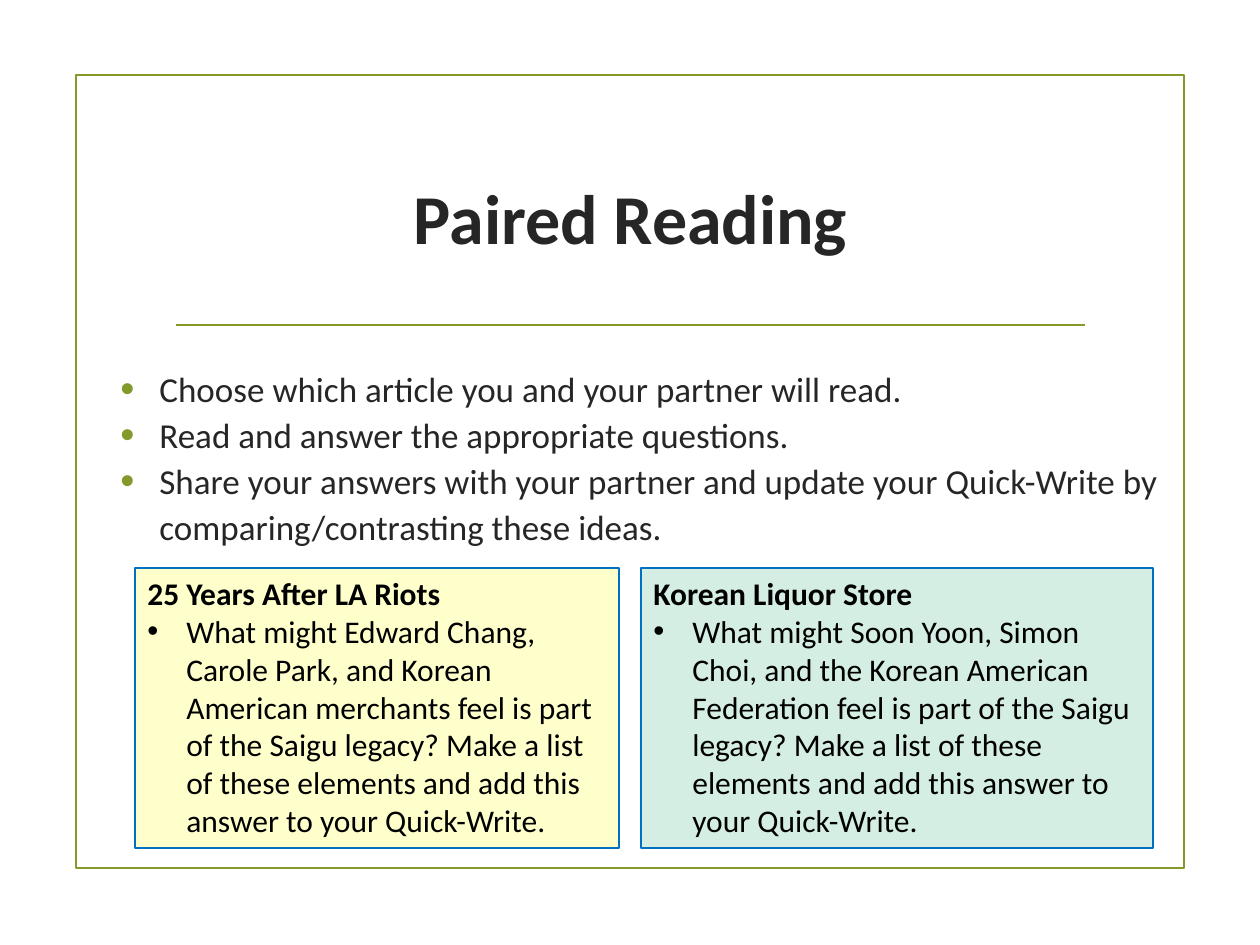
from lxml.etree import SubElement
from pptx import Presentation
from pptx.dml.color import RGBColor
from pptx.enum.shapes import MSO_CONNECTOR, MSO_SHAPE
from pptx.enum.text import MSO_ANCHOR, PP_ALIGN
from pptx.oxml.ns import qn
from pptx.util import Emu, Pt

PX = 914400 / 126
FONT = "Calibri"
INDENT = 39

OLIVE = RGBColor(0x83, 0x99, 0x2A)
CHARCOAL = RGBColor(0x26, 0x26, 0x26)
BLACK = RGBColor(0, 0, 0)
BLUE = RGBColor(0x00, 0x70, 0xC0)
YELLOW = RGBColor(0xFF, 0xFF, 0xCC)
MINT = RGBColor(0xD4, 0xEE, 0xE3)

STEPS = [
    "Choose which article you and your partner will read.",
    "Read and answer the appropriate questions.",
    "Share your answers with your partner and update your Quick-Write by "
    "comparing/contrasting these ideas.",
]

# Left, width, fill, heading, question
ARTICLES = [
    (135, 484, YELLOW, "25 Years After LA Riots",
     "What might Edward Chang, Carole Park, and Korean American merchants "
     "feel is part of the Saigu legacy? Make a list of these elements and "
     "add this answer to your Quick-Write."),
    (641, 512, MINT, "Korean Liquor Store",
     "What might Soon Yoon, Simon Choi, and the Korean American Federation "
     "feel is part of the Saigu legacy? Make a list of these elements and "
     "add this answer to your Quick-Write."),
]


def px(*lengths):
    return [Emu(round(length * PX)) for length in lengths]


def add_bullet(para, color=None, percent=100):
    props = para._p.get_or_add_pPr()
    indent = px(INDENT)[0]
    props.set("marL", str(indent))
    props.set("indent", str(-indent))
    if color is not None:
        SubElement(SubElement(props, qn("a:buClr")), qn("a:srgbClr"), val=str(color))
    SubElement(props, qn("a:buSzPct"), val=str(percent * 1000))
    SubElement(props, qn("a:buFont"), typeface="Arial")
    SubElement(props, qn("a:buChar"), char="•")


def set_font(para, size, color, bold=False):
    font = para.font
    font.name, font.size, font.bold = FONT, Pt(size), bold
    font.color.rgb = color


def add_textbox(page, *place):
    frame = page.shapes.add_textbox(*px(*place)).text_frame
    frame.word_wrap = True
    return frame


def add_rectangle(page, place, line, width, fill=None):
    shape = page.shapes.add_shape(MSO_SHAPE.RECTANGLE, *px(*place))
    shape.shadow.inherit = False
    shape.line.color.rgb = line
    shape.line.width = Pt(width)
    if fill is None:
        shape.fill.background()
    else:
        shape.fill.solid()
        shape.fill.fore_color.rgb = fill
    return shape


def add_rule(page, *ends):
    rule = page.shapes.add_connector(MSO_CONNECTOR.STRAIGHT, *px(*ends))
    rule.line.color.rgb = OLIVE
    rule.line.width = Pt(1.25)
    SubElement(rule._element.spPr, qn("a:effectLst"))


def add_title(page, text):
    frame = add_textbox(page, 162, 126, 937, 180)
    frame.vertical_anchor = MSO_ANCHOR.MIDDLE
    para = frame.paragraphs[0]
    para.text = text
    para.alignment = PP_ALIGN.CENTER
    set_font(para, 40, CHARCOAL, bold=True)


def add_steps(page, steps):
    frame = add_textbox(page, 108, 357, 1067, 203)
    frame.text = "\n".join(steps)
    for para in frame.paragraphs:
        add_bullet(para, OLIVE, 115)
        para.line_spacing = 1.1
        set_font(para, 20, CHARCOAL)


def add_article(page, left, width, fill, heading, question):
    box = add_rectangle(page, (left, 568, width, 280), BLUE, 0.75, fill)
    frame = box.text_frame
    frame.word_wrap = True
    frame.vertical_anchor = MSO_ANCHOR.TOP
    frame.text = f"{heading}\n{question}"
    title, body = frame.paragraphs
    add_bullet(body)
    for para in (title, body):
        para.alignment = PP_ALIGN.LEFT
        set_font(para, 18, BLACK, bold=para is title)


def main():
    deck = Presentation()
    deck.slide_width, deck.slide_height = px(1260, 945)
    page = deck.slides.add_slide(deck.slide_layouts[6])

    # Frame and title
    add_rectangle(page, (76, 75, 1108, 793), OLIVE, 1.25)
    add_rule(page, 176, 325, 1085, 325)
    add_title(page, "Paired Reading")

    # Instructions and the two articles
    add_steps(page, STEPS)
    for article in ARTICLES:
        add_article(page, *article)

    deck.save("out.pptx")


if __name__ == "__main__":
    main()
